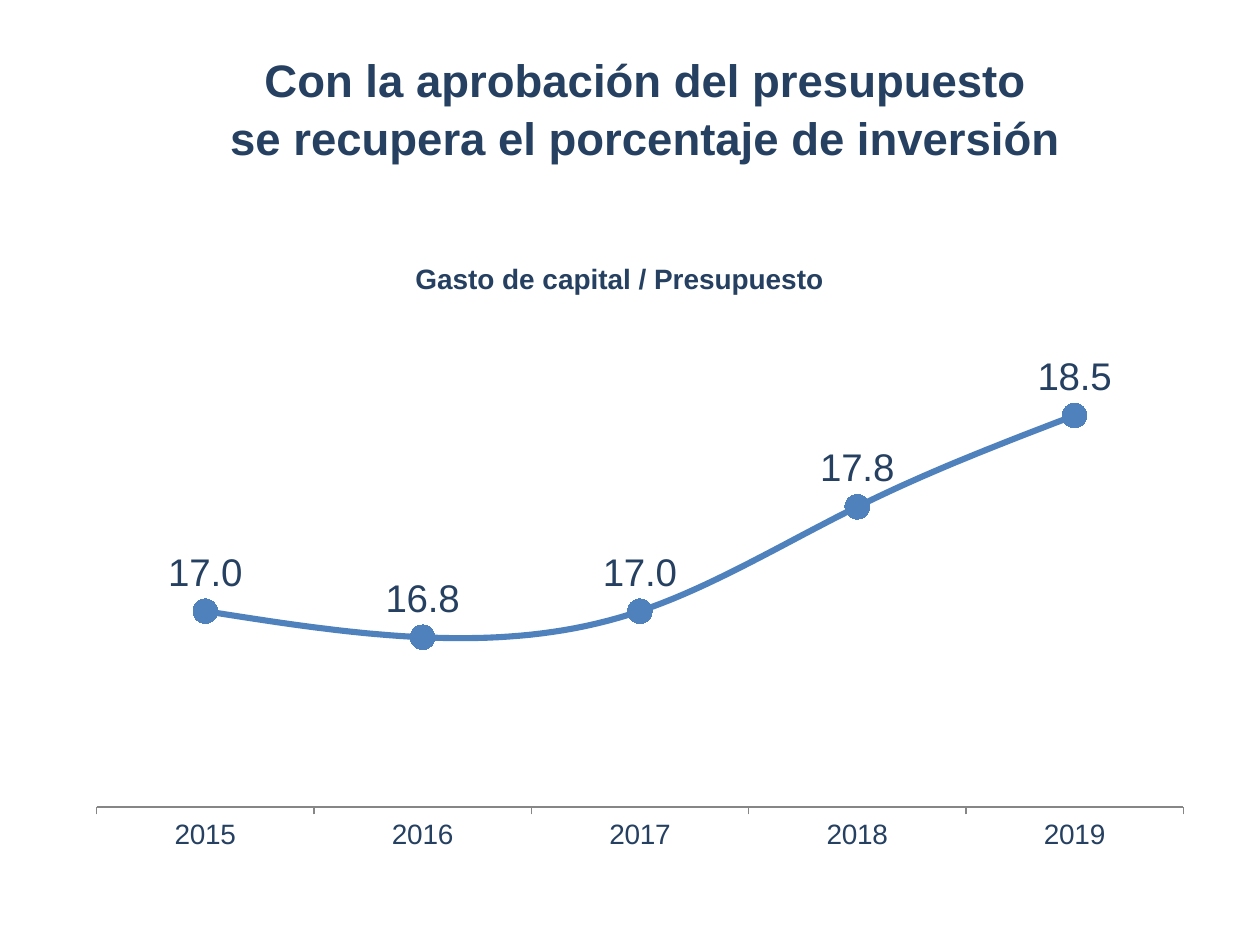
from dataclasses import dataclass

from lxml import etree
from pptx import Presentation
from pptx.chart.data import CategoryChartData
from pptx.dml.color import RGBColor
from pptx.enum.chart import (XL_CHART_TYPE, XL_LABEL_POSITION,
                             XL_MARKER_STYLE, XL_TICK_MARK)
from pptx.enum.text import MSO_AUTO_SIZE, PP_ALIGN
from pptx.oxml.ns import qn
from pptx.util import Emu, Pt

PX = 914400 // 126
LINE_MARKERS = XL_CHART_TYPE.LINE_MARKERS
ABOVE = XL_LABEL_POSITION.ABOVE
CIRCLE = XL_MARKER_STYLE.CIRCLE
TICK_OUT = XL_TICK_MARK.OUTSIDE
FIT_SHAPE = MSO_AUTO_SIZE.SHAPE_TO_FIT_TEXT
CENTER = PP_ALIGN.CENTER


@dataclass(frozen=True)
class Theme:
    font: str = "Arial"
    ink: str = "254061"
    series: str = "4F81BD"
    axis: str = "868686"
    title: int = 26
    body: int = 16
    label: int = 22


THEME = Theme()


def px(*lengths):
    return [Emu(n * PX) for n in lengths]


def rgb(color):
    return RGBColor.from_string(color)


def set_font(font, size, bold=False):
    font.name = THEME.font
    font.size = Pt(size)
    font.bold = bold
    font.color.rgb = rgb(THEME.ink)


def add_text(slide, text, box, *, size, bold=True, gap=0):
    tf = slide.shapes.add_textbox(*px(*box)).text_frame
    tf.word_wrap = True
    tf.auto_size = FIT_SHAPE
    for i, line in enumerate(text.split("\n")):
        p = tf.paragraphs[0] if i == 0 else tf.add_paragraph()
        p.alignment = CENTER
        if i:
            p.space_before = Pt(gap)
        r = p.add_run()
        r.text = line
        set_font(r.font, size, bold)


def set_plot_layout(chart, **edges):
    plot_area = chart.plots[0]._element.getparent()
    layout = plot_area.find(qn("c:layout"))
    if layout is None:
        layout = etree.Element(qn("c:layout"))
        plot_area.insert(0, layout)
    manual = etree.SubElement(layout, qn("c:manualLayout"))
    values = {"layoutTarget": "inner", "xMode": "edge", "yMode": "edge", **edges}
    for name, value in values.items():
        etree.SubElement(manual, qn(f"c:{name}")).set("val", str(value))


def style_axes(chart):
    years = chart.category_axis
    years.major_tick_mark = TICK_OUT
    years.has_major_gridlines = False
    years.format.line.color.rgb = rgb(THEME.axis)
    years.format.line.width = Pt(0.75)
    set_font(years.tick_labels.font, THEME.body)
    shares = chart.value_axis
    shares.minimum_scale = 15.5
    shares.maximum_scale = 19
    shares.has_major_gridlines = False
    shares.visible = False


def style_series(series):
    series.smooth = True
    series.format.line.color.rgb = rgb(THEME.series)
    series.format.line.width = Pt(3.5)
    marker = series.marker
    marker.style = CIRCLE
    marker.size = 14
    marker.format.fill.solid()
    marker.format.fill.fore_color.rgb = rgb(THEME.series)
    marker.format.line.color.rgb = rgb(THEME.series)
    labels = series.data_labels
    labels.show_value = True
    labels.position = ABOVE
    labels.number_format = "0.0"
    labels.number_format_is_linked = False
    set_font(labels.font, THEME.label)


def add_line_chart(slide, categories, values, box):
    data = CategoryChartData(number_format="0.0")
    data.categories = categories
    data.add_series("Series 1", values)
    chart = slide.shapes.add_chart(LINE_MARKERS, *px(*box), data).chart
    chart.has_legend = False
    chart.has_title = False
    chart.plots[0].vary_by_categories = False
    set_font(chart.font, THEME.body)
    set_plot_layout(chart, x=0.02, y=0.02, w=0.96, h=0.88)
    style_axes(chart)
    style_series(chart.plots[0].series[0])


def main():
    prs = Presentation()
    prs.slide_width, prs.slide_height = px(1260, 945)
    slide = prs.slides.add_slide(prs.slide_layouts[6])
    add_text(slide, "Gasto de capital / Presupuesto", (282, 255, 675, 47),
             size=THEME.body)
    add_line_chart(slide, ["2015", "2016", "2017", "2018", "2019"],
                   [17.0, 16.8, 17.0, 17.8, 18.5], (74, 340, 1132, 519))
    add_text(slide, "Con la aprobación del presupuesto\n"
             "se recupera el porcentaje de inversión",
             (194, 46, 903, 123), size=THEME.title, gap=2)
    prs.save("out.pptx")


if __name__ == "__main__":
    main()
